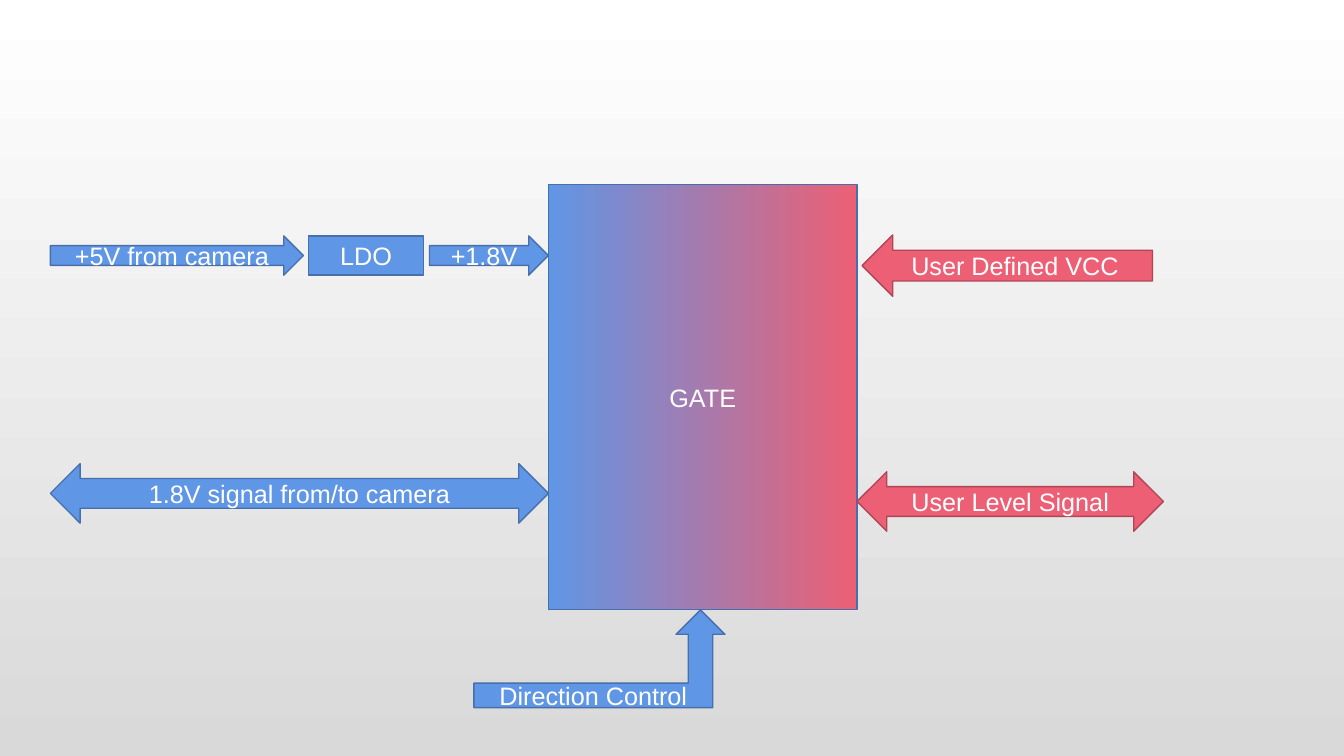
import pptx
import pptx.util
import pptx.dml.color
import pptx.enum.shapes
import pptx.enum.text

RGB = pptx.dml.color.RGBColor.from_string
SHAPE = pptx.enum.shapes.MSO_SHAPE
THEME = {
    "font": "Arial", "size": pptx.util.Pt(18), "text": RGB("FFFFFF"), "line": pptx.util.Pt(1),
    "background": ("FFFFFF", "D9D9D9"),
    "camera": ("6096E6", "476FAA"),  # fill, outline
    "user": ("EC5F74", "AF4656"),
}

prs = pptx.Presentation()
prs.slide_width = pptx.util.Inches(13.33)
prs.slide_height = pptx.util.Inches(7.5)
s = prs.slides.add_slide(prs.slide_layouts[6])


def blend(fill, colors, angle):
    """Apply a two-colour linear gradient; the angle runs counter-clockwise."""
    fill.gradient()
    fill.gradient_angle = angle
    for stop, color in zip(fill.gradient_stops, colors):
        stop.color.rgb = RGB(color)


blend(s.background.fill, THEME["background"], 270)

# Percentages of the slide width (x) and height (y)
MARGIN = 3.75
GATE_LEFT, GATE_RIGHT = 40.81, 63.77
GATE_TOP, GATE_BOTTOM = 24.4, 80.67
POWER_TOP, POWER_HEIGHT = 31.2, 5.2
SIGNAL_HEIGHT = 7.87

# text, shape, side, left, top, right, height
blocks = [
    ("GATE", SHAPE.RECTANGLE, "camera", GATE_LEFT, GATE_TOP, GATE_RIGHT, GATE_BOTTOM - GATE_TOP),
    ("LDO", SHAPE.RECTANGLE, "camera", 22.96, POWER_TOP, 31.51, POWER_HEIGHT),
    ("1.8V signal from/to camera", SHAPE.LEFT_RIGHT_ARROW, "camera",
     MARGIN, 61.33, GATE_LEFT, SIGNAL_HEIGHT),
    ("+5V from camera", SHAPE.RIGHT_ARROW, "camera", MARGIN, POWER_TOP, 22.58, POWER_HEIGHT),
    ("+1.8V", SHAPE.RIGHT_ARROW, "camera", 31.96, POWER_TOP, GATE_LEFT, POWER_HEIGHT),
    ("User Level Signal", SHAPE.LEFT_RIGHT_ARROW, "user", GATE_RIGHT, 62.4, 86.57, SIGNAL_HEIGHT),
    ("User Defined VCC", SHAPE.LEFT_ARROW, "user", 64.14, 31.07, 85.75, 8.13),
    ("Direction Control", SHAPE.BENT_UP_ARROW, "camera", 35.26, GATE_BOTTOM, 53.94, 12.93),
]

col, row = prs.slide_width / 100, prs.slide_height / 100
for text, kind, side, left, top, right, height in blocks:
    sp = s.shapes.add_shape(kind, round(left * col), round(top * row),
                            round((right - left) * col), round(height * row))
    sp.shadow.inherit = False
    fill, outline = THEME[side]
    if text == "GATE":
        blend(sp.fill, (fill, THEME["user"][0]), 0)
    else:
        sp.fill.solid()
        sp.fill.fore_color.rgb = RGB(fill)
    sp.line.color.rgb = RGB(outline)
    sp.line.width = THEME["line"]

    tf = sp.text_frame
    tf.text = text
    tf.word_wrap = True
    tf.vertical_anchor = pptx.enum.text.MSO_ANCHOR.MIDDLE
    p = tf.paragraphs[0]
    p.alignment = pptx.enum.text.PP_ALIGN.CENTER
    r = p.runs[0]
    r.font.name = THEME["font"]
    r.font.size = THEME["size"]
    r.font.color.rgb = THEME["text"]

prs.save("out.pptx")
